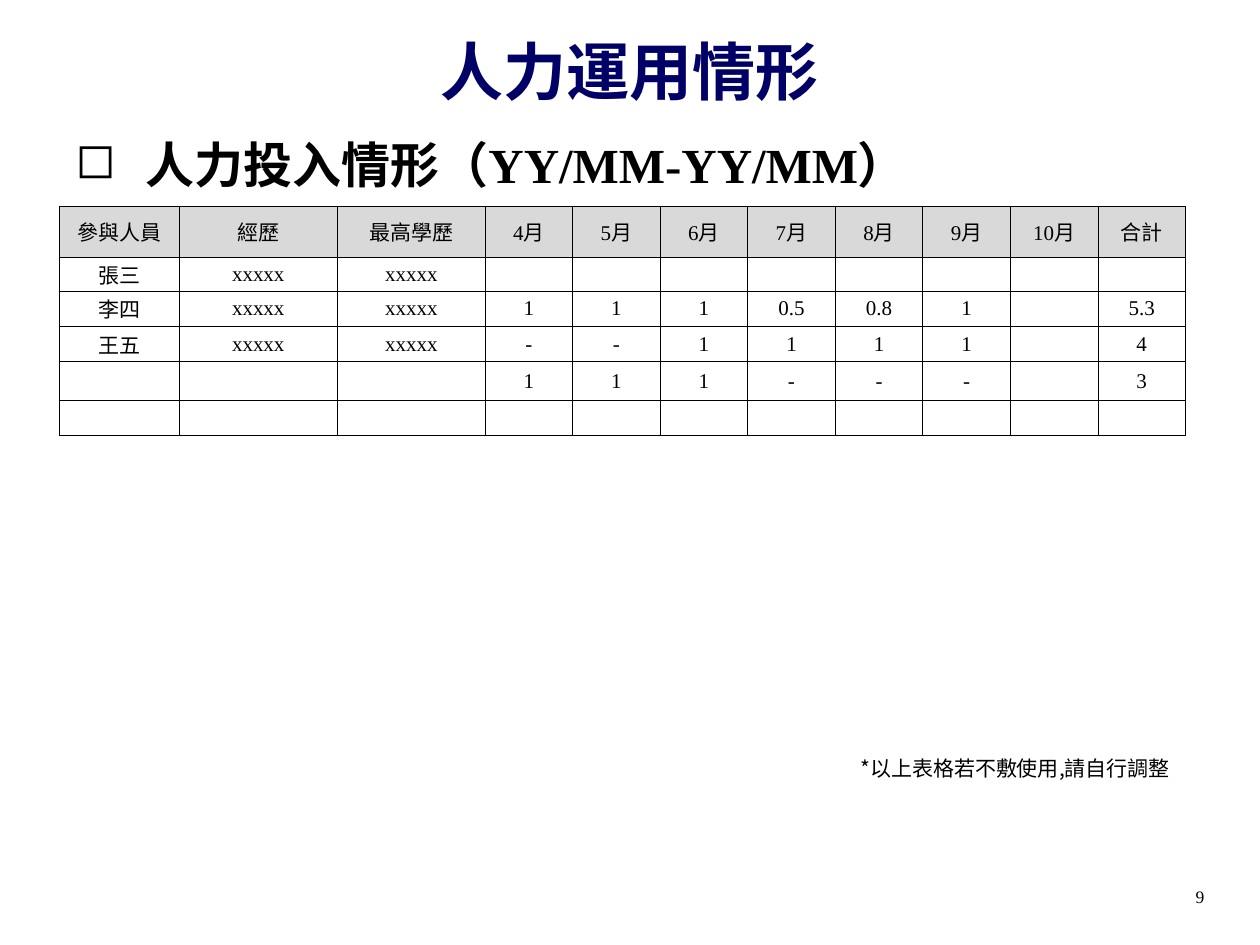
from dataclasses import dataclass

from lxml.etree import SubElement
from pptx import Presentation
from pptx.dml.color import RGBColor
from pptx.enum.text import MSO_ANCHOR, PP_ALIGN
from pptx.oxml.ns import qn
from pptx.slide import Slide
from pptx.util import Inches, Pt

NAVY = RGBColor(0x00, 0x00, 0x66)
BLACK = RGBColor(0x00, 0x00, 0x00)
GREY = RGBColor(0xD9, 0xD9, 0xD9)
SERIF = "Times New Roman"
SANS = "Noto Sans CJK SC"

TABLE_LEFT, TABLE_TOP, TABLE_WIDTH = 0.47, 1.64, 8.94
LEADING_WIDTHS = [0.95, 1.26, 1.17]
ROW_HEIGHTS = [0.4, 0.27, 0.28, 0.28, 0.31, 0.28]
STAFFING = [
    ["參與人員", "經歷", "最高學歷", *(f"{month}月" for month in range(4, 11)), "合計"],
    ["張三", "xxxxx", "xxxxx", *[""] * 8],
    ["李四", "xxxxx", "xxxxx", "1", "1", "1", "0.5", "0.8", "1", "", "5.3"],
    ["王五", "xxxxx", "xxxxx", "-", "-", "1", "1", "1", "1", "", "4"],
    ["", "", "", "1", "1", "1", "-", "-", "-", "", "3"],
    [""] * 11,
]


@dataclass
class TextBlock:
    text: str
    left: float
    top: float
    width: float
    height: float
    size: int
    font: str = SERIF
    color: RGBColor = BLACK
    bold: bool = False
    align: PP_ALIGN = PP_ALIGN.LEFT
    anchor: MSO_ANCHOR = MSO_ANCHOR.TOP
    bullet: str = ""


TEXT_BLOCKS = [
    TextBlock("人力運用情形", 0.5, 0.16, 9, 0.79, 36, color=NAVY, bold=True,
              align=PP_ALIGN.CENTER, anchor=MSO_ANCHOR.MIDDLE),
    TextBlock("人力投入情形（YY/MM-YY/MM）", 0.5, 1.02, 9, 6.02, 28, bold=True, bullet="◻"),
    TextBlock("*以上表格若不敷使用,請自行調整", 6.73, 5.95, 2.73, 0.3, 12, font=SANS),
    TextBlock("9", 9.39, 6.98, 0.61, 0.52, 10),
]


def apply_format(target: object, values: dict) -> None:
    for name, value in values.items():
        setattr(target, name, value)


def add_bullet(paragraph, symbol: str) -> None:
    properties = paragraph._p.get_or_add_pPr()
    properties.set("marL", str(Inches(0.56)))
    properties.set("indent", str(Inches(-0.56)))
    SubElement(properties, qn("a:buChar"), char=symbol)


def add_text_block(slide: Slide, block: TextBlock) -> None:
    shape = slide.shapes.add_textbox(
        *map(Inches, (block.left, block.top, block.width, block.height)))
    apply_format(shape.text_frame, {"word_wrap": True, "vertical_anchor": block.anchor})
    paragraph = shape.text_frame.paragraphs[0]
    paragraph.alignment = block.align
    if block.bullet:
        add_bullet(paragraph, block.bullet)
    run = paragraph.add_run()
    run.text = block.text
    apply_format(run.font, {"name": block.font, "size": Pt(block.size), "bold": block.bold})
    run.font.color.rgb = block.color


def add_borders(cell) -> None:
    properties = cell._tc.get_or_add_tcPr()
    for side in ("lnL", "lnR", "lnT", "lnB"):
        line = SubElement(properties, qn(f"a:{side}"), w=str(Pt(0.5)))
        fill = SubElement(line, qn("a:solidFill"))
        SubElement(fill, qn("a:srgbClr"), val=str(BLACK))


def format_cell(cell, text: str, is_header: bool) -> None:
    apply_format(cell, {
        "margin_left": 0, "margin_right": 0, "margin_top": 0, "margin_bottom": 0,
        "vertical_anchor": MSO_ANCHOR.MIDDLE,
    })
    add_borders(cell)
    if is_header:
        cell.fill.solid()
        cell.fill.fore_color.rgb = GREY
    else:
        cell.fill.background()
    paragraph = cell.text_frame.paragraphs[0]
    paragraph.alignment = PP_ALIGN.CENTER
    if text:
        run = paragraph.add_run()
        run.text = text
        apply_format(run.font, {"name": SERIF, "size": Pt(12), "bold": False})
        run.font.color.rgb = BLACK
    else:
        SubElement(paragraph._p, qn("a:endParaRPr"), sz="1200")


def add_staffing_table(slide: Slide) -> None:
    column_count = len(STAFFING[0])
    value_count = column_count - len(LEADING_WIDTHS)
    value_width = (TABLE_WIDTH - sum(LEADING_WIDTHS)) / value_count
    table = slide.shapes.add_table(
        len(STAFFING), column_count, Inches(TABLE_LEFT), Inches(TABLE_TOP),
        Inches(TABLE_WIDTH), Inches(sum(ROW_HEIGHTS))).table
    apply_format(table, {"first_row": False, "horz_banding": False})
    for column, width in zip(table.columns, LEADING_WIDTHS + [value_width] * value_count):
        column.width = Inches(width)
    for row_index, (row, height, texts) in enumerate(zip(table.rows, ROW_HEIGHTS, STAFFING)):
        row.height = Inches(height)
        for cell, text in zip(row.cells, texts):
            format_cell(cell, text, row_index == 0)


def main() -> None:
    """Build the staffing slide and save it."""
    presentation = Presentation()
    apply_format(presentation, {"slide_width": Inches(10), "slide_height": Inches(7.5)})
    slide = presentation.slides.add_slide(presentation.slide_layouts[6])
    title, heading, note, page_number = TEXT_BLOCKS
    add_text_block(slide, title)
    add_text_block(slide, heading)
    add_staffing_table(slide)
    add_text_block(slide, note)
    add_text_block(slide, page_number)
    presentation.save("out.pptx")


if __name__ == "__main__":
    main()
